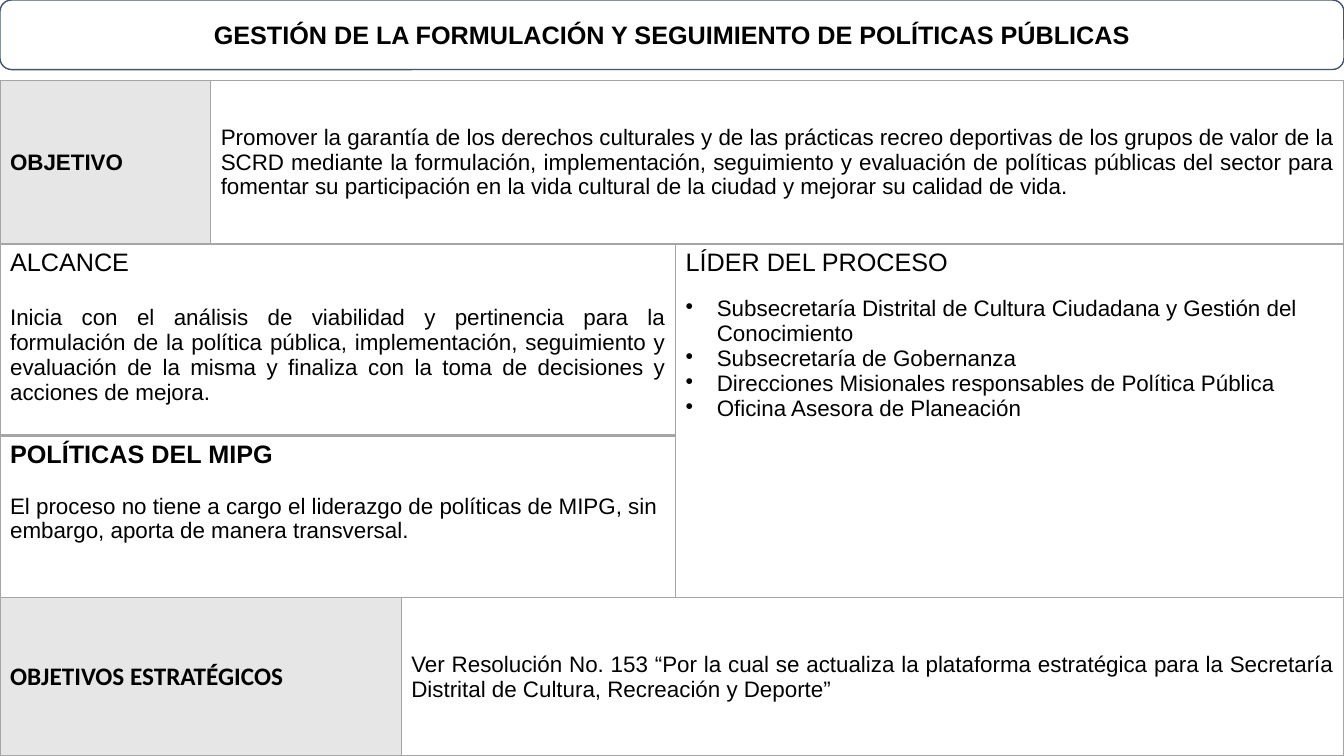
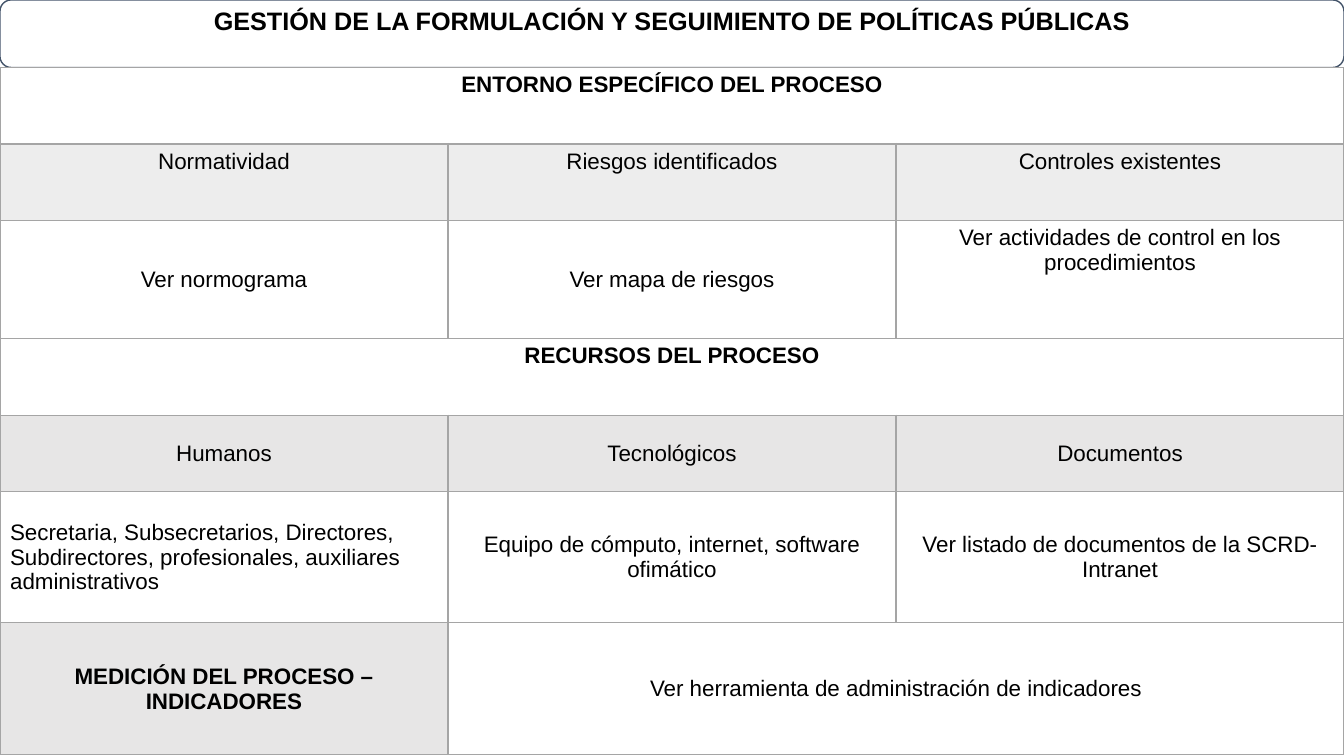
"""Build a two-slide process sheet for public policy management."""
from lxml import etree
from pptx import Presentation, util as u
from pptx.dml.color import RGBColor
from pptx.enum import shapes, text
from pptx.oxml import ns

WIDTH, HEIGHT = 13.33, 7.5
BLACK, WHITE, NAVY, BORDER = "000000", "FFFFFF", "44546A", "A5A5A5"
LABEL, PALE = "E7E6E6", "EDEDED"
LEFT, CENTER, JUSTIFY = text.PP_ALIGN.LEFT, text.PP_ALIGN.CENTER, text.PP_ALIGN.JUSTIFY
TOP, MIDDLE = text.MSO_ANCHOR.TOP, text.MSO_ANCHOR.MIDDLE
TITLE = "GESTIÓN DE LA FORMULACIÓN Y SEGUIMIENTO DE POLÍTICAS PÚBLICAS"


def color(value):
    return RGBColor.from_string(value)


def write(frame, lines):
    frame.word_wrap = True
    for index, (words, style) in enumerate(lines):
        para = frame.paragraphs[0] if index == 0 else frame.add_paragraph()
        para.alignment = style.get("align", LEFT)
        para.space_after = u.Pt(style.get("after", 0))
        span = para.add_run()
        span.text = words
        span.font.color.rgb = color(BLACK)
        values = {"name": style.get("name", "Arial"),
                  "size": u.Pt(style.get("size", 16)),
                  "bold": style.get("bold", False)}
        for name, value in values.items():
            setattr(span.font, name, value)
        if "bullet" in style:
            properties = para._p.get_or_add_pPr()
            properties.set("marL", str(u.Inches(0.31)))
            properties.set("indent", str(u.Inches(-0.31)))
            bullet = etree.SubElement(properties, ns.qn("a:buChar"))
            bullet.set("char", style["bullet"])


plain, strong = {}, {"bold": True}
centered, heading = {"align": CENTER}, {"align": CENTER, "bold": True}
justified, item = {"align": JUSTIFY}, {"bullet": "•"}

objective = {
    "top": 0.8, "columns": [2.09, 11.24], "rows": [1.62],
    "cells": [
        (0, 0, 1, 1, LABEL, MIDDLE, [("OBJETIVO", strong)]),
        (0, 1, 1, 1, WHITE, MIDDLE, [(
            "Promover la garantía de los derechos culturales y de las prácticas recreo "
            "deportivas de los grupos de valor de la SCRD mediante la formulación, "
            "implementación, seguimiento y evaluación de políticas públicas del sector "
            "para fomentar su participación en la vida cultural de la ciudad y mejorar "
            "su calidad de vida.", justified)]),
    ],
}
scope = {
    "top": 2.42, "columns": [6.7, 6.63], "rows": [1.9, 1.61],
    "cells": [
        (0, 0, 1, 1, WHITE, TOP, [
            ("ALCANCE", {"size": 18, "after": 20}),
            ("Inicia con el análisis de viabilidad y pertinencia para la formulación de "
             "la política pública, implementación, seguimiento y evaluación de la misma y "
             "finaliza con la toma de decisiones y acciones de mejora.", justified)]),
        (0, 1, 2, 1, WHITE, TOP, [
            ("LÍDER DEL PROCESO", {"size": 18, "after": 14}),
            ("Subsecretaría Distrital de Cultura Ciudadana y Gestión del Conocimiento", item),
            ("Subsecretaría de Gobernanza", item),
            ("Direcciones Misionales responsables de Política Pública", item),
            ("Oficina Asesora de Planeación", item)]),
        (1, 0, 1, 1, WHITE, TOP, [
            ("POLÍTICAS DEL MIPG", {"size": 18, "bold": True, "after": 18}),
            ("El proceso no tiene a cargo el liderazgo de políticas de MIPG, sin embargo, "
             "aporta de manera transversal.", plain)]),
    ],
}
strategy = {
    "top": 5.93, "columns": [3.98, 9.35], "rows": [1.57],
    "cells": [
        (0, 0, 1, 1, LABEL, MIDDLE, [
            ("OBJETIVOS ESTRATÉGICOS", {"size": 18, "bold": True, "name": "Calibri"})]),
        (0, 1, 1, 1, WHITE, MIDDLE, [(
            "Ver Resolución No. 153 “Por la cual se actualiza la plataforma estratégica "
            "para la Secretaría Distrital de Cultura, Recreación y Deporte”", justified)]),
    ],
}
resources = {
    "top": 0.67, "columns": [WIDTH / 3] * 3,
    "rows": [0.76, 0.76, 1.17, 0.76, 0.76, 1.3, 1.31],
    "cells": [
        (0, 0, 1, 3, WHITE, TOP, [("ENTORNO ESPECÍFICO DEL PROCESO", heading)]),
        (1, 0, 1, 1, PALE, TOP, [("Normatividad", centered)]),
        (1, 1, 1, 1, PALE, TOP, [("Riesgos identificados", centered)]),
        (1, 2, 1, 1, PALE, TOP, [("Controles existentes", centered)]),
        (2, 0, 1, 1, WHITE, MIDDLE, [("Ver normograma", centered)]),
        (2, 1, 1, 1, WHITE, MIDDLE, [("Ver mapa de riesgos", centered)]),
        (2, 2, 1, 1, WHITE, TOP, [
            ("Ver actividades de control en los procedimientos", centered)]),
        (3, 0, 1, 3, WHITE, TOP, [("RECURSOS DEL PROCESO", heading)]),
        (4, 0, 1, 1, LABEL, MIDDLE, [("Humanos", centered)]),
        (4, 1, 1, 1, LABEL, MIDDLE, [("Tecnológicos", centered)]),
        (4, 2, 1, 1, LABEL, MIDDLE, [("Documentos", centered)]),
        (5, 0, 1, 1, WHITE, MIDDLE, [
            ("Secretaria, Subsecretarios, Directores, Subdirectores, profesionales, "
             "auxiliares administrativos", plain)]),
        (5, 1, 1, 1, WHITE, MIDDLE, [
            ("Equipo de cómputo, internet, software ofimático", centered)]),
        (5, 2, 1, 1, WHITE, MIDDLE, [
            ("Ver listado de documentos de la SCRD-Intranet", centered)]),
        (6, 0, 1, 1, LABEL, MIDDLE, [
            ("MEDICIÓN DEL PROCESO –", heading), ("INDICADORES", heading)]),
        (6, 1, 1, 2, WHITE, MIDDLE, [
            ("Ver herramienta de administración de indicadores", centered)]),
    ],
}

deck = Presentation()
deck.slide_width, deck.slide_height = u.Inches(WIDTH), u.Inches(HEIGHT)

for banner_height, title_anchor, tables in [
        (0.69, MIDDLE, [objective, scope, strategy]), (0.67, TOP, [resources])]:
    page = deck.slides.add_slide(deck.slide_layouts[5])
    place = [u.Inches(value) for value in (0, 0, WIDTH, banner_height)]

    banner = page.shapes.add_shape(shapes.MSO_SHAPE.ROUNDED_RECTANGLE, *place)
    banner.shadow.inherit = False
    banner.fill.solid()
    banner.fill.fore_color.rgb = color(WHITE)
    banner.line.color.rgb = color(NAVY)
    banner.line.width = u.Pt(1)
    page.shapes._spTree.insert(2, banner._element)

    title = page.shapes.title
    for name, value in zip(("left", "top", "width", "height"), place):
        setattr(title, name, value)
    title.text_frame.auto_size = text.MSO_AUTO_SIZE.NONE
    title.text_frame.vertical_anchor = title_anchor
    write(title.text_frame, [(TITLE, {"size": 18, "bold": True, "align": CENTER})])

    for layout in tables:
        rows, columns = layout["rows"], layout["columns"]
        grid = page.shapes.add_table(
            len(rows), len(columns), 0, u.Inches(layout["top"]),
            u.Inches(WIDTH), u.Inches(sum(rows))).table
        grid.first_row = grid.horz_banding = False
        for row, height in zip(grid.rows, rows):
            row.height = u.Inches(height)
        for column, width in zip(grid.columns, columns):
            column.width = u.Inches(width)

        for row, column, down, across, fill, anchor, lines in layout["cells"]:
            cell = grid.cell(row, column)
            if down * across > 1:
                cell.merge(grid.cell(row + down - 1, column + across - 1))
            cell.vertical_anchor = anchor
            write(cell.text_frame, lines)
            for y in range(row, row + down):
                for x in range(column, column + across):
                    part = grid.cell(y, x)
                    part.fill.solid()
                    part.fill.fore_color.rgb = color(fill)
                    weights = {"lnL": 1, "lnR": 1, "lnT": 2 if y == 1 else 1,
                               "lnB": 2 if y == 0 else 1}
                    for index, (side, weight) in enumerate(weights.items()):
                        edge = etree.Element(ns.qn("a:" + side), w=str(u.Pt(weight)))
                        paint = etree.SubElement(edge, ns.qn("a:solidFill"))
                        etree.SubElement(paint, ns.qn("a:srgbClr"), val=BORDER)
                        part._tc.get_or_add_tcPr().insert(index, edge)

deck.save("out.pptx")
